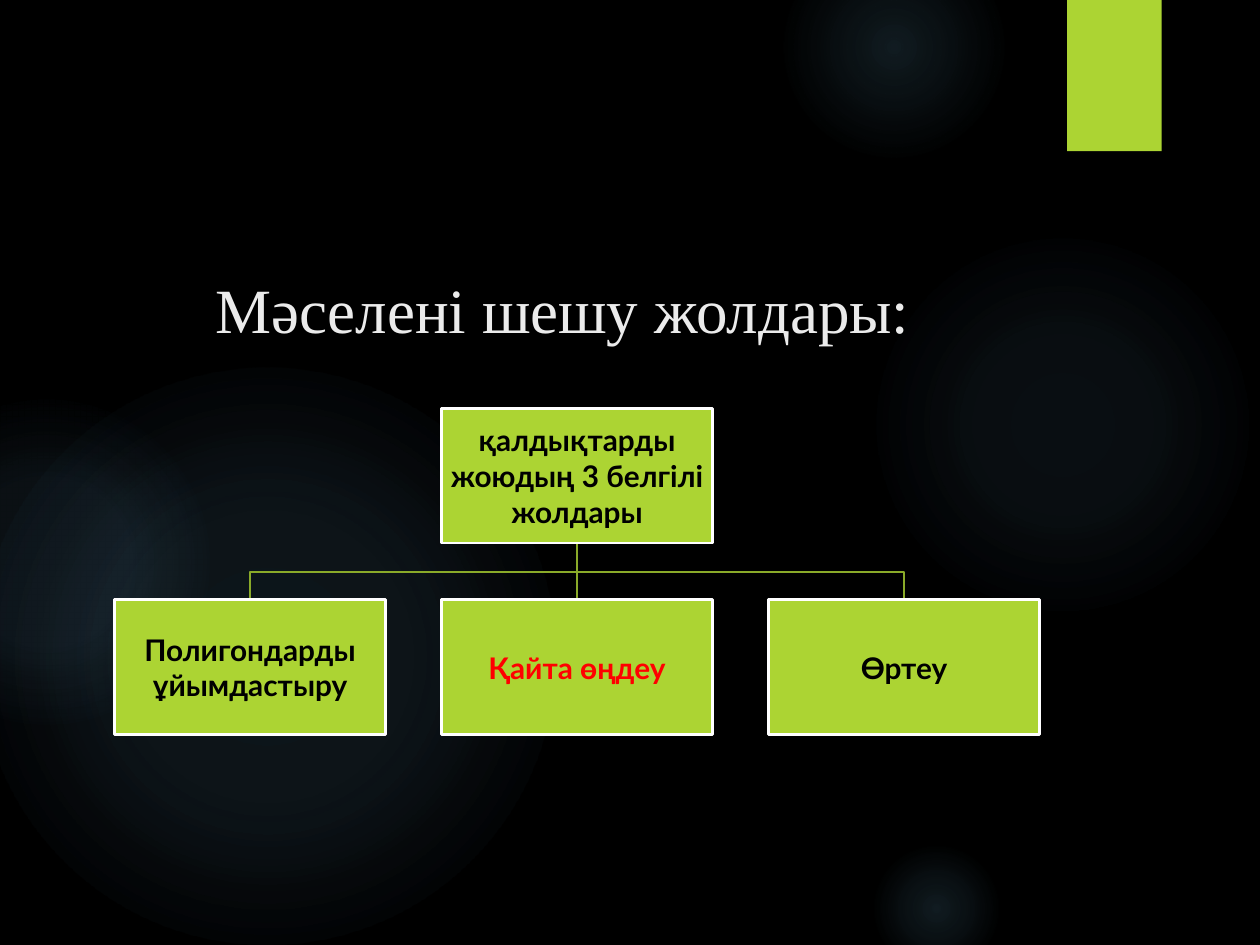
from lxml.etree import SubElement
from pptx import Presentation
from pptx.dml.color import RGBColor
from pptx.enum.shapes import MSO_CONNECTOR, MSO_SHAPE
from pptx.enum.text import MSO_ANCHOR, PP_ALIGN
from pptx.oxml import parse_xml
from pptx.oxml.ns import nsdecls, qn
from pptx.util import Inches, Pt

COLORS = {
    "background": "000000", "glow": "7AC4F0", "lime": "ACD433", "branch": "8AAA29",
    "border": "FFFFFF", "title": "EBEBEB", "text": "000000", "highlight": "FF0000",
}
TITLE = "Мәселені шешу жолдары:"
ROOT = "қалдықтарды жоюдың 3 белгілі жолдары"
METHODS = [
    ("Полигондарды ұйымдастыру", "text"),
    ("Қайта өңдеу", "highlight"),
    ("Өртеу", "text"),
]
# left, top, diameter, (position %, opacity %) stops
GLOWS = [
    (6.89, 1.83, 3.08, [(0, 7), (36, 6), (69, 0)]),
    (6.22, -0.5, 1.75, [(0, 14), (36, 7), (73, 0)]),
    (6.89, 6.67, 1.08, [(0, 14), (36, 7), (66, 0)]),
    (-0.17, 2.92, 4.58, [(0, 11), (36, 10), (75, 0)]),
    (-0.92, 3.17, 2.58, [(0, 8), (36, 8), (72, 0)]),
]
BOX_WIDTH, BOX_HEIGHT = 2.15, 1.07
ROOT_TOP, METHOD_TOP = 3.24, 4.76
FIRST_LEFT, STEP = 0.91, 2.595
ROOT_BOTTOM = ROOT_TOP + BOX_HEIGHT
BRANCH_TOP = 4.54


def color(name):
    return RGBColor.from_string(COLORS[name])


def add_shape(page, kind, left, top, width, height):
    shape = page.shapes.add_shape(
        kind, Inches(left), Inches(top), Inches(width), Inches(height))
    shape.shadow.inherit = False
    shape.line.fill.background()
    return shape


def add_glow(page, left, top, size, stops):
    shape = add_shape(page, MSO_SHAPE.OVAL, left, top, size, size)
    stop_xml = "".join(
        f'<a:gs pos="{position * 1000}"><a:srgbClr val="{COLORS["glow"]}">'
        f'<a:alpha val="{opacity * 1000}"/></a:srgbClr></a:gs>'
        for position, opacity in stops)
    gradient = parse_xml(
        f'<a:gradFill {nsdecls("a")}><a:gsLst>{stop_xml}</a:gsLst><a:path path="circle">'
        '<a:fillToRect l="50000" t="50000" r="50000" b="50000"/></a:path></a:gradFill>')
    shape._element.spPr.find(qn("a:prstGeom")).addnext(gradient)


def fill_solid(shape, name):
    shape.fill.solid()
    shape.fill.fore_color.rgb = color(name)


def set_line(shape, name):
    shape.line.color.rgb = color(name)
    shape.line.width = Pt(1.5)


def write(frame, text, font_name, size, color_name, bold, align):
    frame.word_wrap = True
    paragraph = frame.paragraphs[0]
    paragraph.text = text
    paragraph.alignment = align
    font = paragraph.font
    font.name, font.size, font.bold = font_name, Pt(size), bold
    font.color.rgb = color(color_name)


def add_box(page, left, top, text, text_color):
    box = add_shape(page, MSO_SHAPE.RECTANGLE, left, top, BOX_WIDTH, BOX_HEIGHT)
    fill_solid(box, "lime")
    set_line(box, "border")
    frame = box.text_frame
    frame.margin_left = frame.margin_right = Inches(0.01)
    frame.margin_top = frame.margin_bottom = Inches(0.01)
    frame.vertical_anchor = MSO_ANCHOR.MIDDLE
    write(frame, text, "Lato", 17, text_color, True, PP_ALIGN.CENTER)


def add_branch(page, start, end):
    if start == end:
        branch = page.shapes.add_connector(
            MSO_CONNECTOR.STRAIGHT, Inches(start), Inches(ROOT_BOTTOM),
            Inches(end), Inches(METHOD_TOP))
        SubElement(branch._element.spPr, qn("a:effectLst"))
    else:
        builder = page.shapes.build_freeform(Inches(start), Inches(ROOT_BOTTOM))
        corners = [(start, BRANCH_TOP), (end, BRANCH_TOP), (end, METHOD_TOP)]
        builder.add_line_segments(
            [(Inches(x), Inches(y)) for x, y in corners], close=False)
        branch = builder.convert_to_shape()
        branch.fill.background()
        branch.shadow.inherit = False
    set_line(branch, "branch")


def main():
    deck = Presentation()
    deck.slide_width, deck.slide_height = Inches(10), Inches(7.5)
    page = deck.slides.add_slide(deck.slide_layouts[6])
    fill_solid(page.background, "background")

    for glow in GLOWS:
        add_glow(page, *glow)
    fill_solid(add_shape(page, MSO_SHAPE.RECTANGLE, 8.47, 0, 0.75, 1.2), "lime")

    title = page.shapes.add_textbox(Inches(1.61), Inches(2.1), Inches(7.09), Inches(1.1))
    write(title.text_frame, TITLE, "Times New Roman", 36, "title", False, PP_ALIGN.LEFT)

    lefts = [FIRST_LEFT + STEP * index for index in range(len(METHODS))]
    root_left = lefts[len(lefts) // 2]
    for left in lefts:
        add_branch(page, root_left + BOX_WIDTH / 2, left + BOX_WIDTH / 2)
    add_box(page, root_left, ROOT_TOP, ROOT, "text")
    for left, (text, text_color) in zip(lefts, METHODS):
        add_box(page, left, METHOD_TOP, text, text_color)

    deck.save("out.pptx")


if __name__ == "__main__":
    main()
